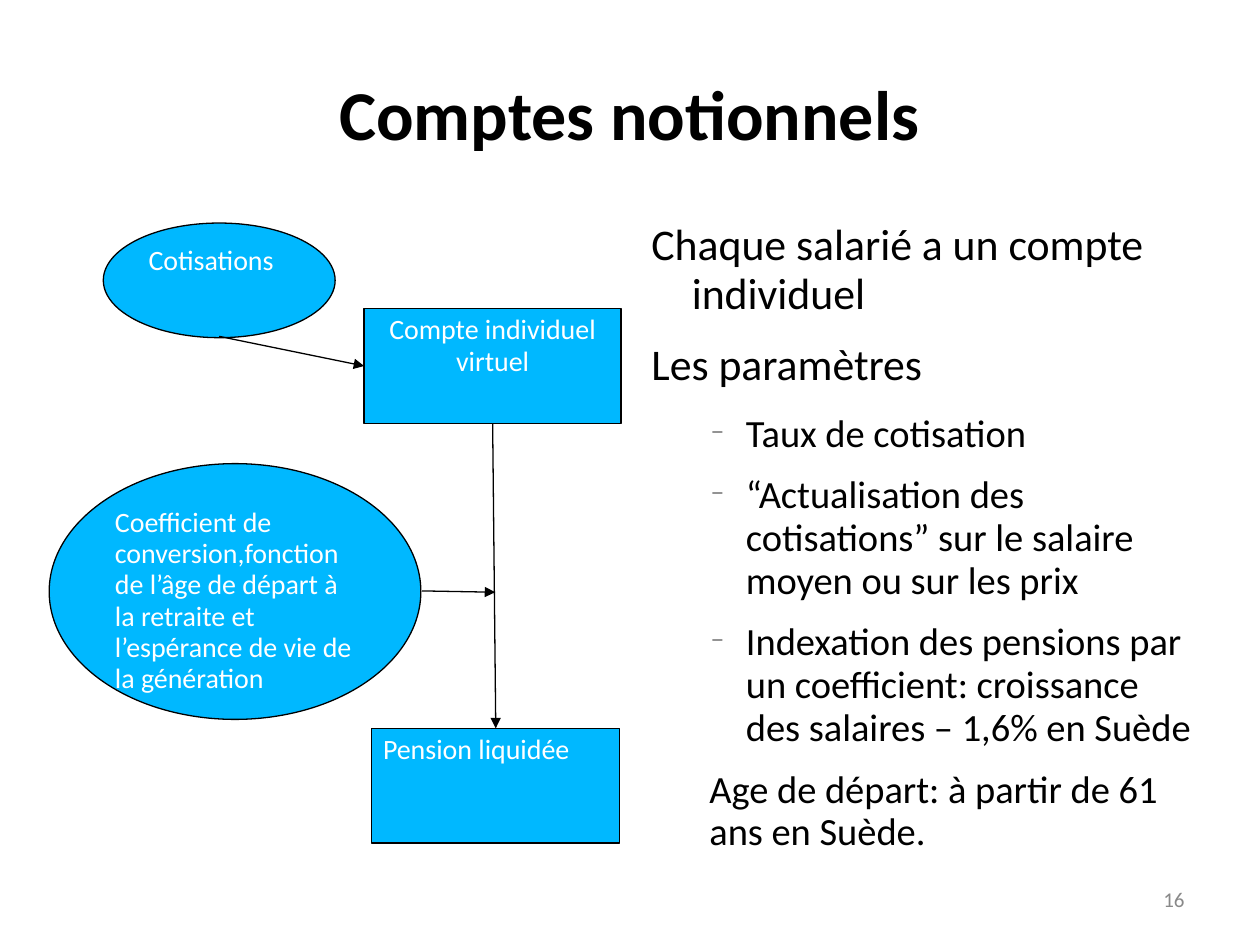
from lxml import etree
from pptx import Presentation
from pptx.dml.color import RGBColor
from pptx.enum.shapes import MSO_CONNECTOR, MSO_SHAPE
from pptx.enum.text import MSO_ANCHOR, PP_ALIGN
from pptx.oxml.ns import qn
from pptx.util import Inches, Pt

RECTANGLE, ELLIPSE = MSO_SHAPE.RECTANGLE, MSO_SHAPE.OVAL
STRAIGHT = MSO_CONNECTOR.STRAIGHT
TOP, MIDDLE = MSO_ANCHOR.TOP, MSO_ANCHOR.MIDDLE
LEFT, CENTER, RIGHT = PP_ALIGN.LEFT, PP_ALIGN.CENTER, PP_ALIGN.RIGHT
TOP_SIDE, LEFT_SIDE, BOTTOM_SIDE = 0, 1, 2


def color(hex_value):
    return RGBColor.from_string(hex_value)


class SlideBuilder:
    """Style and current slide; lengths are cells of a 100 by 75 grid."""

    font = "Calibri"
    black, white, blue, gray = "000000", "FFFFFF", "00B8FF", "898989"
    cell = Inches(0.1)
    line_width = Pt(0.75)
    line_spacing = 0.93

    def __init__(self, presentation):
        presentation.slide_width = 100 * self.cell
        presentation.slide_height = 75 * self.cell
        self.slide = presentation.slides.add_slide(presentation.slide_layouts[6])

    def grid(self, *cells):
        return [round(value * self.cell) for value in cells]

    def format_paragraph(self, paragraph, size, hex_color, align=LEFT, bold=False):
        paragraph.alignment = align
        paragraph.line_spacing = self.line_spacing
        for run in paragraph.runs:
            run.font.name = self.font
            run.font.size = Pt(size)
            run.font.bold = bold
            run.font.color.rgb = color(hex_color)

    def text_box(self, box, anchor=TOP, margins=(0, 0)):
        frame = self.slide.shapes.add_textbox(*self.grid(*box)).text_frame
        self.set_frame(frame, anchor, margins)
        return frame

    def set_frame(self, frame, anchor, margins):
        frame.word_wrap = True
        frame.vertical_anchor = anchor
        horizontal, vertical = self.grid(*margins)
        frame.margin_left = frame.margin_right = horizontal
        frame.margin_top = frame.margin_bottom = vertical

    def label(self, text, box, size, hex_color, align, bold=False, margins=(0, 0)):
        frame = self.text_box(box, MIDDLE, margins)
        frame.text = text
        self.format_paragraph(frame.paragraphs[0], size, hex_color, align, bold)

    def outline(self, items, box):
        """Write (text, level, left margin, first-line indent, bullet) items."""
        frame = self.text_box(box)
        for index, (text, level, margin, indent, bullet) in enumerate(items):
            paragraph = frame.add_paragraph() if index else frame.paragraphs[0]
            paragraph.text = text
            paragraph.level = level
            paragraph.space_after = Pt(10.4 if level else 12.9)
            self.format_paragraph(paragraph, 22 if level else 25, self.black)
            properties = paragraph._p.get_or_add_pPr()
            margin, indent = self.grid(margin, indent)
            properties.set("marL", str(margin))
            properties.set("indent", str(indent))
            if bullet:
                etree.SubElement(properties, qn("a:buSzPct")).set("val", "45000")
                etree.SubElement(properties, qn("a:buChar")).set("char", bullet)
            else:
                etree.SubElement(properties, qn("a:buNone"))

    def node(self, kind, text, box, align=LEFT):
        shape = self.slide.shapes.add_shape(kind, *self.grid(*box))
        shape.shadow.inherit = False
        shape.fill.solid()
        shape.fill.fore_color.rgb = color(self.blue)
        shape.line.color.rgb = color(self.black)
        shape.line.width = self.line_width
        self.set_frame(shape.text_frame, TOP, (0.9, 0.5))
        shape.text_frame.text = text
        self.format_paragraph(shape.text_frame.paragraphs[0], 16, self.white, align)
        return shape

    def arrow(self, start, end, source=None, target=None):
        """Draw an arrow; source and target are optional (shape, side) pairs."""
        connector = self.slide.shapes.add_connector(STRAIGHT, *self.grid(*start, *end))
        if source:
            connector.begin_connect(*source)
        if target:
            connector.end_connect(*target)
        connector.line.color.rgb = color(self.black)
        connector.line.width = self.line_width
        line = connector.line._get_or_add_ln()
        etree.SubElement(line, qn("a:tailEnd")).set("type", "triangle")
        etree.SubElement(connector._element.spPr, qn("a:effectLst"))


def main():
    presentation = Presentation()
    builder = SlideBuilder(presentation)

    builder.label("Comptes notionnels", (5, 3, 89.9, 12.5), 40, builder.black, CENTER, bold=True)

    main_point = (0, 4.2, -3.2, None)
    parameter = (1, 8.5, -2.8, "−")
    builder.outline([
        ("Chaque salarié a un compte individuel", *main_point),
        ("Les paramètres", *main_point),
        ("Taux de cotisation", *parameter),
        ("“Actualisation des cotisations” sur le salaire moyen ou sur les prix", *parameter),
        ("Indexation des pensions par un coefficient: croissance des salaires – 1,6% en Suède",
         *parameter),
        ("Age de départ: à partir de 61 ans en Suède.", 1, 5.6, 0, None),
    ], (50.7, 17.6, 44.2, 49.5))

    account = builder.node(RECTANGLE, "Compte individuel virtuel", (28.9, 24.5, 20.4, 9.1), CENTER)
    builder.node(ELLIPSE, "Cotisations", (8.2, 17.7, 18.4, 9.1))
    builder.arrow((17.4, 26.7), (28.9, 29), target=(account, LEFT_SIDE))

    pension = builder.node(RECTANGLE, "Pension liquidée", (29.5, 57.8, 19.7, 9.1))
    builder.arrow((39.1, 33.6), (39.4, 57.8), (account, BOTTOM_SIDE), (pension, TOP_SIDE))

    builder.node(
        ELLIPSE,
        "Coefficient de conversion,fonction de l’âge de départ à la retraite "
        "et l’espérance de vie de la génération",
        (3.9, 36.8, 29.5, 20.3),
    )
    builder.arrow((33.5, 46.9), (39.3, 47))

    builder.label("16", (71.7, 69.5, 23.3, 4), 12, builder.gray, RIGHT, margins=(1, 0.5))

    presentation.save("out.pptx")


if __name__ == "__main__":
    main()
